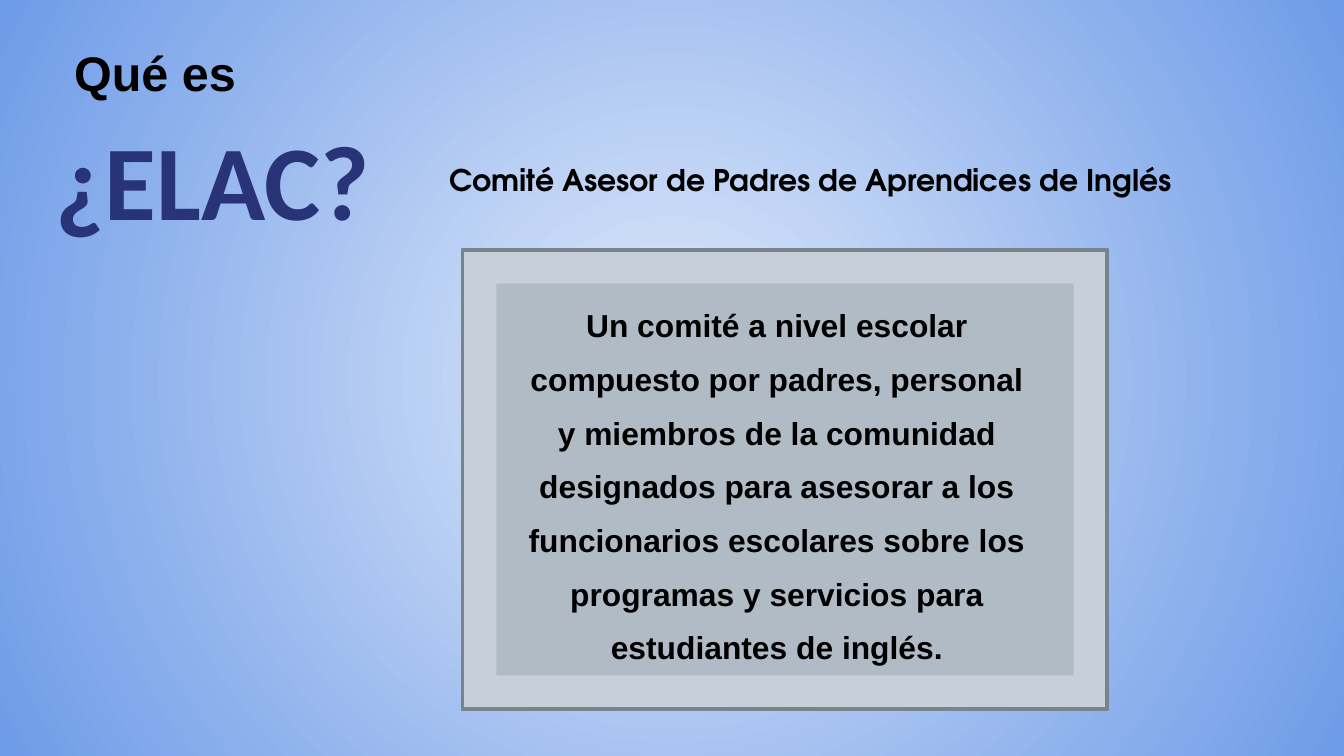
import pptx
import pptx.util
import pptx.dml.color
import pptx.enum.shapes
import pptx.enum.text
import pptx.oxml.ns
from lxml import etree
from pptx.util import Cm

COLORS = {
    "glow": "DFE9FB",
    "sky": "6E9BE7",
    "frame": "C7D0D8",
    "border": "77838D",
    "panel": "B1BBC5",
    "navy": "283378",
    "black": "000000",
}


def rgb(name):
    return pptx.dml.color.RGBColor.from_string(COLORS[name])


def paint_background(slide):
    """Radial gradient, light in the centre."""
    fill = slide.background.fill
    fill.gradient()
    for stop, position, color in zip(fill.gradient_stops, (0, 1), ("glow", "sky")):
        stop.position = position
        stop.color.rgb = rgb(color)
    qn = pptx.oxml.ns.qn
    gradient = next(slide.element.iter(qn("a:gradFill")))
    gradient.remove(gradient.find(qn("a:lin")))
    circle = etree.SubElement(gradient, qn("a:path"), path="circle")
    etree.SubElement(circle, qn("a:fillToRect"), l="50000", t="50000", r="50000", b="50000")


def write_text(shape, box, text, size, font="Arial", color="black",
               align=pptx.enum.text.PP_ALIGN.LEFT, margins=(0, 0.03), wrap=True):
    """Place a text shape in its box and format its single paragraph."""
    shape.left, shape.top, shape.width, shape.height = map(Cm, box)
    frame = shape.text_frame
    frame.text = text
    frame.word_wrap = wrap
    frame.auto_size = pptx.enum.text.MSO_AUTO_SIZE.NONE
    frame.vertical_anchor = pptx.enum.text.MSO_ANCHOR.TOP
    frame.margin_left = frame.margin_right = Cm(margins[0])
    frame.margin_top, frame.margin_bottom = Cm(margins[1]), Cm(0)
    paragraph = frame.paragraphs[0]
    paragraph.alignment = align
    run = paragraph.runs[0]
    run.font.name = font
    run.font.size = pptx.util.Pt(size)
    run.font.bold = True
    run.font.color.rgb = rgb(color)
    return paragraph


def add_text(slide, box, text, size, **style):
    shape = slide.shapes.add_textbox(*map(Cm, box))
    return write_text(shape, box, text, size, **style)


def add_rectangle(slide, box, fill, border=None):
    shape = slide.shapes.add_shape(
        pptx.enum.shapes.MSO_SHAPE.RECTANGLE, *map(Cm, box))
    shape.shadow.inherit = False
    shape.fill.solid()
    shape.fill.fore_color.rgb = rgb(fill)
    if border:
        shape.line.color.rgb = rgb(border)
        shape.line.width = pptx.util.Pt(2)
    else:
        shape.line.fill.background()


def add_heading(slide, box):
    """Title with the large acronym below it."""
    left, top, width, height = box
    write_text(slide.shapes.title, (left + 0.43, top + 0.87, 3.45, 2.24),
               "Qué es", 26, margins=(0, 0.13))
    acronym = add_text(slide, (left + 0.08, top, width - 0.08, height), "¿ELAC?", 98,
                       font="Calibri", color="navy", wrap=False)
    # Lowered baseline, which also reduces the drawn size
    acronym.runs[0].font._element.set("baseline", "-25000")


def add_definition(slide, box):
    """Framed panel with the definition."""
    left, top, width, height = box
    inset = 0.64
    add_rectangle(slide, box, "frame", "border")
    add_rectangle(slide, (left + inset, top + inset,
                          width - 2 * inset, height - 2 * inset), "panel")
    paragraph = add_text(
        slide, (left + 1.12, top + 0.74, 9.65, 6.88),
        "Un comité a nivel escolar compuesto por padres, personal y miembros de la "
        "comunidad designados para asesorar a los funcionarios escolares sobre los "
        "programas y servicios para estudiantes de inglés.",
        17, align=pptx.enum.text.PP_ALIGN.CENTER)
    paragraph.line_spacing = 1.41


def main():
    presentation = pptx.Presentation()
    presentation.slide_width = Cm(25.4)
    presentation.slide_height = Cm(14.29)
    slide = presentation.slides.add_slide(presentation.slide_layouts.get_by_name("Title Only"))

    paint_background(slide)
    add_definition(slide, (8.74, 4.72, 12.19, 8.69))
    add_heading(slide, (0.97, -0.18, 6.58, 4.22))
    # Full name of the committee
    add_text(slide, (8.36, 3, 14.12, 0.81),
             "Comité Asesor de Padres de Aprendices de Inglés", 16,
             font="TeX Gyre Adventor", margins=(0.13, 0.05))

    presentation.save("out.pptx")


if __name__ == "__main__":
    main()
